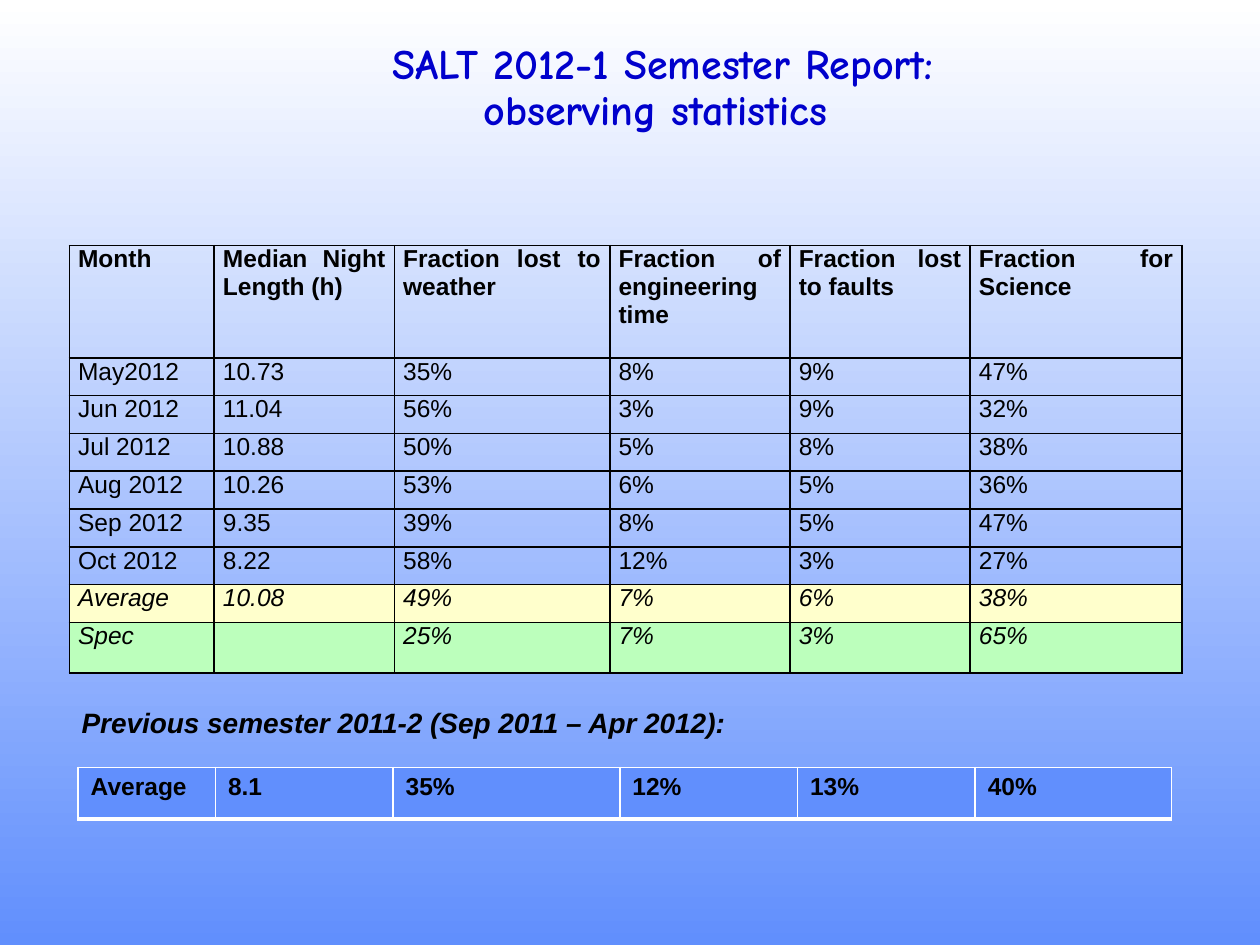
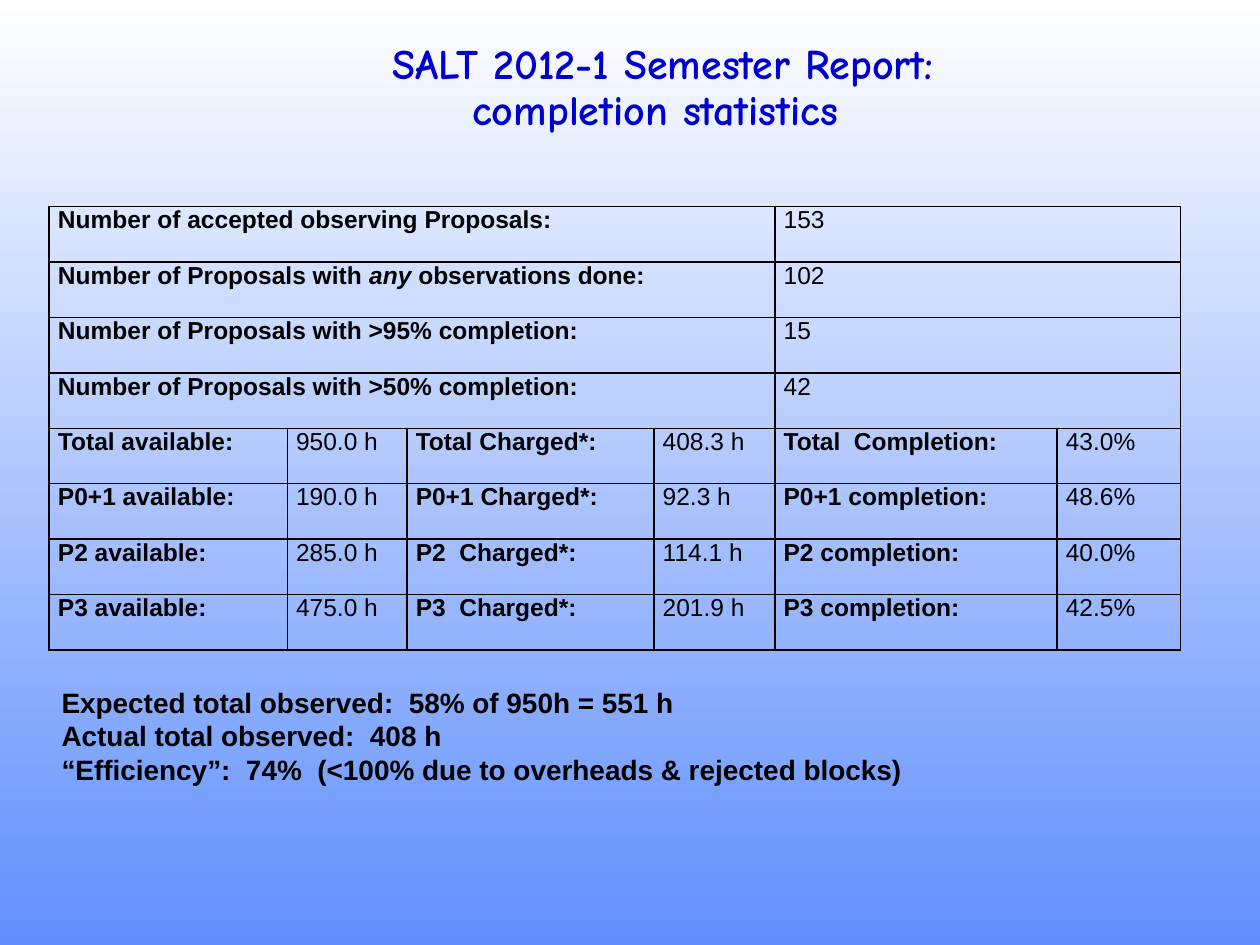
from lxml.etree import SubElement
from pptx import Presentation
from pptx.dml.color import RGBColor
from pptx.enum.text import MSO_ANCHOR, MSO_AUTO_SIZE, PP_ALIGN
from pptx.oxml.ns import qn
from pptx.util import Inches, Pt

BLACK, WHITE, BLUE, TITLE_BLUE = "000000", "FFFFFF", "618FFD", "0000CC"
YELLOW, GREEN = "FFFFCC", "BCFFBC"
BODY_FONT, TITLE_FONT = "Arial", "Comic Neue"
REPORT = "SALT 2012-1 Semester Report:"

OBSERVING_ROWS = [
    ("Month", "Median Night Length (h)", "Fraction lost to weather",
     "Fraction of engineering time", "Fraction lost to faults", "Fraction for Science"),
    ("May2012", "10.73", "35%", "8%", "9%", "47%"),
    ("Jun 2012", "11.04", "56%", "3%", "9%", "32%"),
    ("Jul 2012", "10.88", "50%", "5%", "8%", "38%"),
    ("Aug 2012", "10.26", "53%", "6%", "5%", "36%"),
    ("Sep 2012", "9.35", "39%", "8%", "5%", "47%"),
    ("Oct 2012", "8.22", "58%", "12%", "3%", "27%"),
    ("Average", "10.08", "49%", "7%", "6%", "38%"),
    ("Spec", "", "25%", "7%", "3%", "65%"),
]
OBSERVING_WIDTHS = [1.15, 1.43, 1.71, 1.43, 1.43, 1.68]
OBSERVING_HEIGHTS = [0.89] + [0.3] * 7 + [0.4]
SUMMARY_FILLS = {"Average": YELLOW, "Spec": GREEN}

PREVIOUS_HEADING = ["Previous semester 2011-2 (Sep 2011 – Apr 2012):"]
PREVIOUS_ROWS = [("Average", "8.1", "35%", "12%", "13%", "40%")]
PREVIOUS_WIDTHS = [1.09, 1.41, 1.8, 1.41, 1.41, 1.56]

# A tuple in place of a string holds runs, the second one in italics.
PROPOSAL_COUNTS = [
    ("Number of accepted observing Proposals:", "153"),
    (("Number of Proposals with ", "any", " observations done:"), "102"),
    ("Number of Proposals with >95% completion:", "15"),
    ("Number of Proposals with >50% completion:", "42"),
]
PRIORITY_ROWS = [
    ("Total available:", "950.0 h", "Total Charged*:", "408.3 h", "Total  Completion:", "43.0%"),
    ("P0+1 available:", "190.0 h", "P0+1 Charged*:", "92.3 h", "P0+1 completion:", "48.6%"),
    ("P2 available:", "285.0 h", "P2  Charged*:", "114.1 h", "P2 completion:", "40.0%"),
    ("P3 available:", "475.0 h", "P3  Charged*:", "201.9 h", "P3 completion:", "42.5%"),
]
COMPLETION_WIDTHS = [1.89, 0.95, 1.96, 0.96, 2.24, 0.98]
VALUE_COLUMN = 4
EFFICIENCY_LINES = [
    "Expected total observed:  58% of 950h = 551 h",
    "Actual total observed:  408 h",
    "“Efficiency”:  74%  (<100% due to overheads & rejected blocks)",
]


def rgb(color):
    return RGBColor.from_string(color)


def set_font(font, size, color=BLACK, name=BODY_FONT, bold=False, italic=False):
    font.name, font.size, font.bold, font.italic = name, Pt(size), bold, italic
    font.color.rgb = rgb(color)


def set_background(master):
    fill = master.background.fill
    fill.gradient()
    fill.gradient_angle = 270
    for stop, color in zip(fill.gradient_stops, (WHITE, BLUE)):
        stop.color.rgb = rgb(color)


def add_titled_slide(presentation, topic):
    slide = presentation.slides.add_slide(presentation.slide_layouts[6])
    title = slide.shapes.add_textbox(Inches(1.72), Inches(0.16), Inches(7.08), Inches(1.09))
    frame = title.text_frame
    frame.word_wrap = True
    frame.vertical_anchor = MSO_ANCHOR.MIDDLE
    paragraph = frame.paragraphs[0]
    paragraph.text = f"{REPORT}\v{topic} "
    paragraph.alignment = PP_ALIGN.CENTER
    paragraph.line_spacing = 0.9
    set_font(paragraph.font, 24, TITLE_BLUE, TITLE_FONT, bold=True)
    return slide


def add_note(slide, left, top, width, height, lines, italic=False):
    box = slide.shapes.add_textbox(Inches(left), Inches(top), Inches(width), Inches(height))
    frame = box.text_frame
    frame.word_wrap = False
    frame.auto_size = MSO_AUTO_SIZE.SHAPE_TO_FIT_TEXT
    frame.text = "\n".join(lines)
    for paragraph in frame.paragraphs:
        set_font(paragraph.font, 16, bold=True, italic=italic)


def set_borders(cell, color, bottom_width):
    properties = cell._tc.get_or_add_tcPr()
    for side, width in (("L", 1), ("R", 1), ("T", 1), ("B", bottom_width)):
        line = SubElement(properties, qn(f"a:ln{side}"), w=str(Pt(width)))
        SubElement(SubElement(line, qn("a:solidFill")), qn("a:srgbClr"), val=color)


def add_grid(slide, left, top, widths, heights, line_color=BLACK, bottom_width=1, tight=True):
    """Add an empty ruled table; tight cells have narrow side margins only."""
    table = slide.shapes.add_table(
        len(heights), len(widths), Inches(left), Inches(top),
        Inches(sum(widths)), Inches(sum(heights))).table
    table.first_row = table.horz_banding = False
    for column, width in zip(table.columns, widths):
        column.width = Inches(width)
    for row, height in zip(table.rows, heights):
        row.height = Inches(height)
    for cell in table.iter_cells():
        set_borders(cell, line_color, bottom_width)
        cell.fill.background()
        if tight:
            cell.margin_left = cell.margin_right = Inches(0.07)
            cell.margin_top = cell.margin_bottom = 0
    return table


def write_cell(cell, content, bold=False, italic=False, fill=None, alignment=PP_ALIGN.LEFT):
    paragraph = cell.text_frame.paragraphs[0]
    paragraph.alignment = alignment
    set_font(paragraph.font, 14, bold=bold, italic=italic)
    if isinstance(content, str):
        paragraph.text = content
    else:
        for index, part in enumerate(content):
            run = paragraph.add_run()
            run.text = part
            run.font.italic = index == 1
    if fill:
        cell.fill.solid()
        cell.fill.fore_color.rgb = rgb(fill)


def add_observing_slide(presentation):
    slide = add_titled_slide(presentation, "observing statistics")
    table = add_grid(slide, 0.55, 1.95, OBSERVING_WIDTHS, OBSERVING_HEIGHTS)
    for row, values in enumerate(OBSERVING_ROWS):
        fill = SUMMARY_FILLS.get(values[0])
        for column, value in enumerate(values):
            write_cell(table.cell(row, column), value, bold=row == 0, italic=fill is not None,
                       fill=fill, alignment=PP_ALIGN.JUSTIFY)

    previous = add_grid(slide, 0.62, 6.09, PREVIOUS_WIDTHS, [0.41], WHITE, 3, tight=False)
    for cell, value in zip(previous.iter_cells(), PREVIOUS_ROWS[0]):
        write_cell(cell, value, bold=True, fill=BLUE)
    add_note(slide, 0.55, 5.55, 5.56, 0.37, PREVIOUS_HEADING, italic=True)


def add_completion_slide(presentation):
    slide = add_titled_slide(presentation, "completion statistics")
    row_count = len(PROPOSAL_COUNTS) + len(PRIORITY_ROWS)
    table = add_grid(slide, 0.39, 1.64, COMPLETION_WIDTHS, [0.44] * row_count)
    for row, (label, count) in enumerate(PROPOSAL_COUNTS):
        table.cell(row, 0).merge(table.cell(row, VALUE_COLUMN - 1))
        table.cell(row, VALUE_COLUMN).merge(table.cell(row, len(COMPLETION_WIDTHS) - 1))
        write_cell(table.cell(row, 0), label, bold=True)
        write_cell(table.cell(row, VALUE_COLUMN), count)
    for row, values in enumerate(PRIORITY_ROWS, start=len(PROPOSAL_COUNTS)):
        for column, value in enumerate(values):
            write_cell(table.cell(row, column), value, bold=column % 2 == 0)
    add_note(slide, 0.39, 5.39, 6.96, 0.91, EFFICIENCY_LINES)


def main():
    presentation = Presentation()
    presentation.slide_width, presentation.slide_height = Inches(10), Inches(7.5)
    set_background(presentation.slide_master)
    add_observing_slide(presentation)
    add_completion_slide(presentation)
    presentation.save("out.pptx")


if __name__ == "__main__":
    main()
